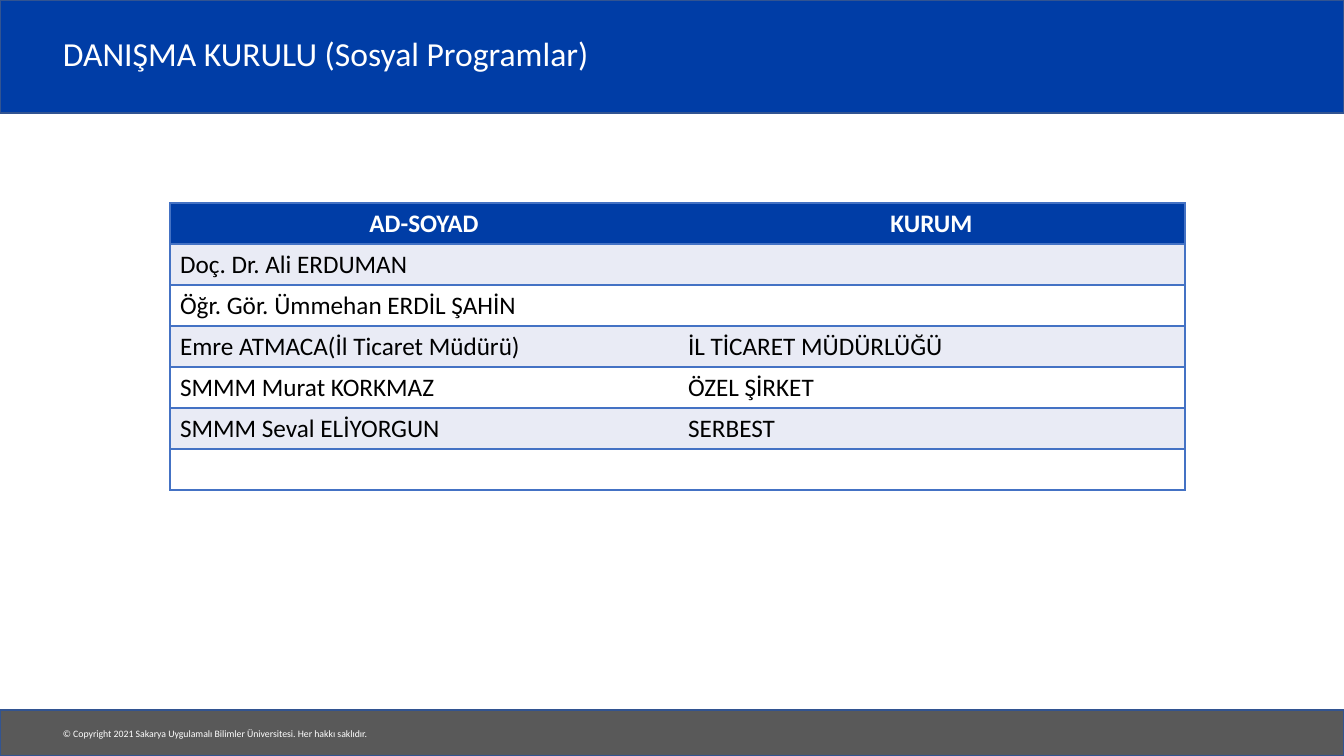
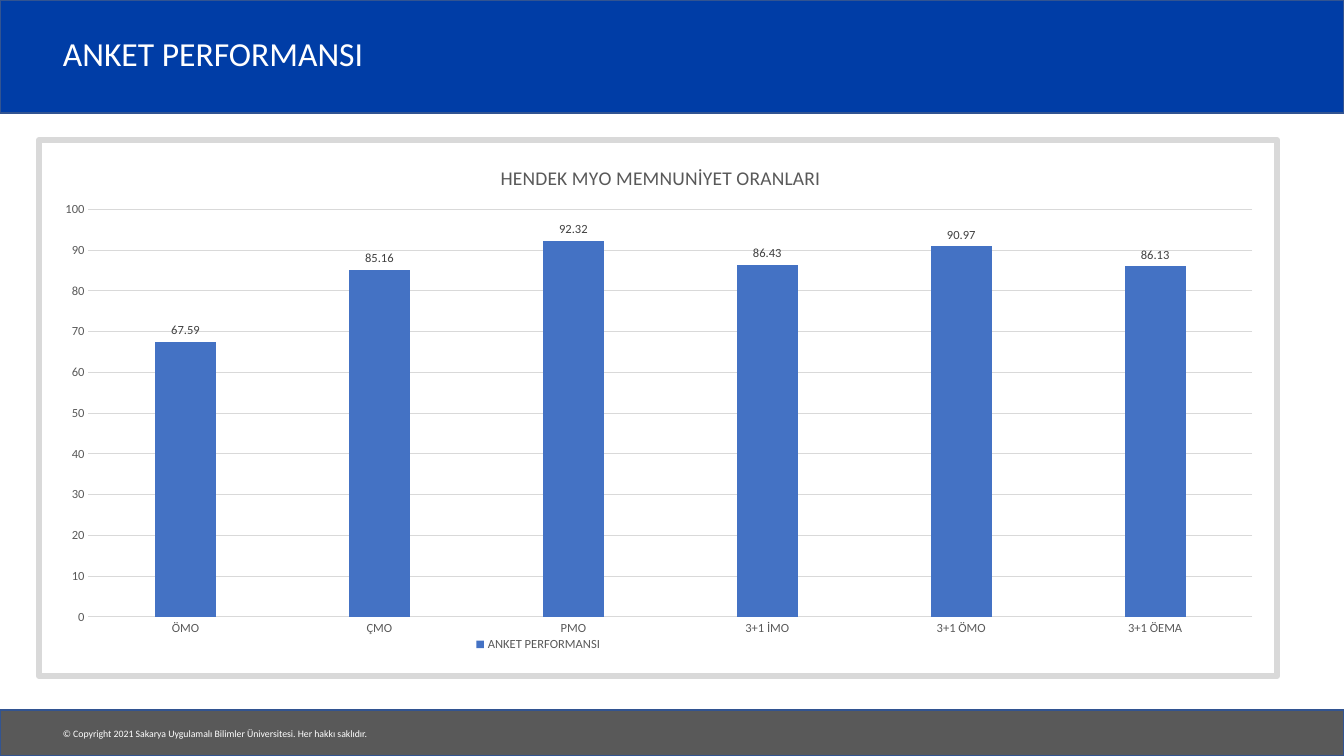
import dataclasses

import pptx
import pptx.chart.data
import pptx.dml.color
import pptx.enum.chart
import pptx.enum.shapes
import pptx.enum.text
import pptx.oxml
import pptx.oxml.ns
import pptx.util

SCALE = 914400 / 100.8
WIDE, HIGH = 1344, 756


def px(size):
    return pptx.util.Emu(round(size * SCALE))


def rgb(tint):
    return pptx.dml.color.RGBColor.from_string(tint)


def node(tag, body):
    """Make an XML element; the tag may carry attributes."""
    names = pptx.oxml.ns.nsdecls("a", "c")
    return pptx.oxml.parse_xml(f"<{tag} {names}>{body}</{tag.split()[0]}>")


def solid(tint):
    return f'<a:solidFill><a:srgbClr val="{tint}"/></a:solidFill>'


@dataclasses.dataclass(frozen=True)
class Theme:
    face: str = "Calibri"
    blue: str = "003DA6"
    edge: str = "325491"
    gray: str = "595959"
    white: str = "FFFFFF"
    black: str = "000000"
    band: str = "E9EBF5"
    accent: str = "4472C4"
    grid: str = "D9D9D9"
    label: str = "404040"
    title: int = 24
    body: int = 18
    head: int = 14
    tick: int = 9
    foot: int = 7
    rule: float = 1
    hair: float = 0.75
    frame: float = 4.25


class Deck:
    def __init__(self, theme):
        self.theme = theme
        self.show = pptx.Presentation()
        self.show.slide_width = px(WIDE)
        self.show.slide_height = px(HIGH)
        self.slide = None

    def page(self, title):
        """Start a slide with its bands, footer and title."""
        look = self.theme
        self.slide = self.show.slides.add_slide(self.show.slide_layouts[6])
        self.bar(0, 113, look.blue)
        self.bar(710, 46, look.gray)
        self.text((53, 723, 332, 22), look.foot, False,
                  "© Copyright 2021 Sakarya Uygulamalı Bilimler Üniversitesi. "
                  "Her hakkı saklıdır.")
        self.text((53, 19, 1112, 74), look.title, True, title)

    def bar(self, top, tall, tint):
        rect = pptx.enum.shapes.MSO_SHAPE.RECTANGLE
        shape = self.slide.shapes.add_shape(
            rect, px(0), px(top), px(WIDE), px(tall))
        shape.shadow.inherit = False
        shape.fill.solid()
        shape.fill.fore_color.rgb = rgb(tint)
        shape.line.color.rgb = rgb(self.theme.edge)
        shape.line.width = pptx.util.Pt(self.theme.rule)

    def font(self, font, size, tint, bold=False):
        font.name = self.theme.face
        font.size = pptx.util.Pt(size)
        font.bold = bold
        font.color.rgb = rgb(tint)

    def run(self, para, words, size, tint, bold=False):
        run = para.add_run()
        run.text = words
        self.font(run.font, size, tint, bold)

    def text(self, box, size, wrap, words):
        frame = self.slide.shapes.add_textbox(*map(px, box)).text_frame
        frame.word_wrap = wrap
        frame.vertical_anchor = pptx.enum.text.MSO_ANCHOR.MIDDLE
        para = frame.paragraphs[0]
        para.line_spacing = 0.9 if wrap else 1.0
        self.run(para, words, size, self.theme.white)

    def table(self, left, top, cols, tall, rows):
        look = self.theme
        shape = self.slide.shapes.add_table(
            len(rows), len(cols), px(left), px(top),
            px(sum(cols)), px(tall * len(rows)))
        table = shape.table
        plain = "{2D5ABB26-0587-4C30-8999-92F81FD0307C}"
        table._tbl.tblPr.find(pptx.oxml.ns.qn("a:tableStyleId")).text = plain
        table.horz_banding = False
        for col, wide in zip(table.columns, cols):
            col.width = px(wide)
        for y, row in enumerate(rows):
            table.rows[y].height = px(tall)
            fill = look.band if y % 2 else look.white
            for x, words in enumerate(row):
                cell = table.cell(y, x)
                cell.fill.solid()
                cell.fill.fore_color.rgb = rgb(fill if y else look.blue)
                self.border(cell, "LTB" if x == 0 else "RTB")
                para = cell.text_frame.paragraphs[0]
                if y == 0:
                    para.alignment = pptx.enum.text.PP_ALIGN.CENTER
                if words:
                    tint = look.black if y else look.white
                    self.run(para, words, look.body, tint, y == 0)

    def border(self, cell, sides):
        """Draw the named sides, ahead of the fill as the schema asks."""
        wide = pptx.util.Pt(self.theme.rule)
        props = cell._tc.get_or_add_tcPr()
        for spot, side in enumerate(sides):
            line = node(f'a:ln{side} w="{wide}"', solid(self.theme.accent))
            props.insert(spot, line)

    def chart(self, box, title, name, cats, vals):
        look = self.theme
        kinds = pptx.enum.chart
        data = pptx.chart.data.CategoryChartData()
        data.categories = cats
        data.add_series(name, vals)
        chart = self.slide.shapes.add_chart(
            kinds.XL_CHART_TYPE.COLUMN_CLUSTERED, *map(px, box), data).chart
        self.font(chart.font, look.tick, look.gray)
        self.run(chart.chart_title.text_frame.paragraphs[0],
                 title, look.head, look.gray)
        chart.has_legend = True
        chart.legend.position = kinds.XL_LEGEND_POSITION.BOTTOM
        chart.legend.include_in_layout = False
        self.font(chart.legend.font, look.tick, look.gray)
        self.axes(chart)
        self.bars(chart.plots[0])
        self.frame(chart)
        self.place(chart, "title", x=0.37, y=0.04)
        self.place(chart, "plotArea", x=0.04, y=0.13, w=0.94, h=0.76)
        self.place(chart, "legend", x=0.35, y=0.92)

    def axes(self, chart):
        look = self.theme
        for axis in (chart.category_axis, chart.value_axis):
            axis.major_tick_mark = pptx.enum.chart.XL_TICK_MARK.NONE
            self.font(axis.tick_labels.font, look.tick, look.gray)
        side = chart.value_axis
        side.minimum_scale, side.maximum_scale = 0, 100
        side.major_unit = 10
        side.format.line.fill.background()
        for line in (chart.category_axis.format.line,
                     side.major_gridlines.format.line):
            line.color.rgb = rgb(look.grid)
            line.width = pptx.util.Pt(look.hair)

    def bars(self, plot):
        look = self.theme
        plot.gap_width = 219
        plot.vary_by_categories = False
        fill = plot.series[0].format.fill
        fill.solid()
        fill.fore_color.rgb = rgb(look.accent)
        plot.has_data_labels = True
        labels = plot.data_labels
        labels.show_value = True
        labels.position = pptx.enum.chart.XL_LABEL_POSITION.OUTSIDE_END
        self.font(labels.font, look.tick, look.label)

    def frame(self, chart):
        look = self.theme
        wide = pptx.util.Pt(look.frame)
        line = f'<a:ln w="{wide}">{solid(look.grid)}<a:round/></a:ln>'
        area = chart.element.find(pptx.oxml.ns.qn("c:chart"))
        area.addnext(node("c:spPr", solid(look.white) + line))

    def place(self, chart, part, **spots):
        """Fix a chart part at fractions of the chart's size."""
        item = chart.element.xpath(f"c:chart//c:{part}")[0]
        for old in item.xpath("c:layout"):
            item.remove(old)
        inner = '<c:layoutTarget val="inner"/>' if part == "plotArea" else ""
        modes = '<c:xMode val="edge"/><c:yMode val="edge"/>'
        sizes = "".join(f'<c:{k} val="{v}"/>' for k, v in spots.items())
        layout = node("c:layout", f"<c:manualLayout>{inner}{modes}{sizes}"
                                  "</c:manualLayout>")
        after = item.xpath("c:overlay") or list(item)
        after[0].addprevious(layout)


def main():
    deck = Deck(Theme())

    deck.page("DANIŞMA KURULU (Sosyal Programlar)")
    deck.table(170, 203, (508, 507), 41, (
        ("AD-SOYAD", "KURUM"),
        ("Doç. Dr. Ali ERDUMAN", ""),
        ("Öğr. Gör. Ümmehan ERDİL ŞAHİN", ""),
        ("Emre ATMACA(İl Ticaret Müdürü)", "İL TİCARET MÜDÜRLÜĞÜ"),
        ("SMMM Murat KORKMAZ", "ÖZEL ŞİRKET"),
        ("SMMM Seval ELİYORGUN", "SERBEST"),
        ("", ""),
    ))

    deck.page("ANKET PERFORMANSI")
    deck.chart((36, 137, 1244, 542), "HENDEK MYO MEMNUNİYET ORANLARI",
               "ANKET PERFORMANSI",
               ("ÖMO", "ÇMO", "PMO", "3+1 İMO", "3+1 ÖMO", "3+1 ÖEMA"),
               (67.59, 85.16, 92.32, 86.43, 90.97, 86.13))

    deck.show.save("out.pptx")


if __name__ == "__main__":
    main()
